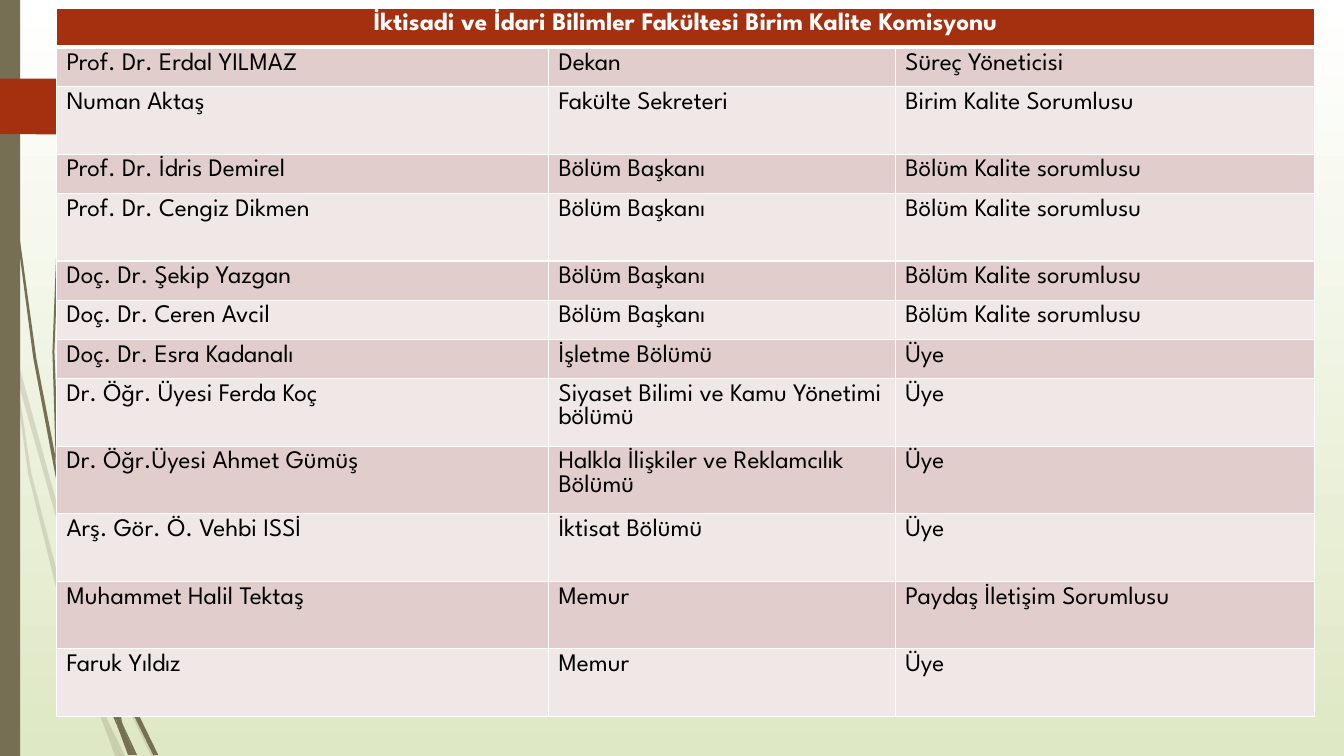
import pptx
import pptx.dml.color
import pptx.enum.text
import pptx.oxml.ns
import pptx.util
import lxml.etree

RGBColor = pptx.dml.color.RGBColor
Align = pptx.enum.text.PP_ALIGN

OLIVE = RGBColor(0x76, 0x6F, 0x54)
RUST = RGBColor(0xA5, 0x30, 0x10)
ROSE = RGBColor(0xE1, 0xCD, 0xCC)
BLUSH = RGBColor(0xF0, 0xE8, 0xE7)
PALE_GREEN = RGBColor(0xDF, 0xE8, 0xC4)
WHITE = RGBColor(0xFF, 0xFF, 0xFF)
BLACK = RGBColor(0, 0, 0)

PX = 9144
FONT = "League Spartan"
THIN, THICK = 1, 3
SHORT, TALL = 39, 67

FAINT_GRASS = [
    [(11, 350), (9, 322), (0, 282), (0, 299), (10, 344)],
    [(58, 522), (84, 599), (85, 586), (62, 520), (14, 345), (17, 376)],
    [(92, 607), (88, 596), (88, 610), (123, 694), (150, 750), (155, 750), (127, 692)],
    [(119, 750), (124, 750), (105, 711)],
    [(93, 683), (70, 619), (31, 469), (17, 376), (11, 350), (28, 470), (65, 621),
     (92, 693), (101, 714), (99, 707)],
    [(84, 599), (87, 646), (93, 683), (96, 692), (105, 711), (103, 706), (91, 646),
     (88, 610), (88, 608)],
    [(88, 584), (110, 462), (160, 349), (229, 245), (268, 198), (290, 175), (312, 154),
     (312, 153), (289, 175), (268, 197), (228, 244), (158, 348), (107, 461), (85, 584),
     (85, 586), (88, 596)],
    [(101, 714), (114, 750), (119, 750)],
    [(88, 608), (88, 610), (88, 596), (85, 586), (84, 599)],
    [(96, 692), (93, 683), (99, 707), (101, 714), (119, 750), (105, 711)],
]

DARK_GRASS = [
    [(7, 110), (17, 233), (33, 355), (56, 477), (57, 481), (55, 457), (55, 453),
     (36, 355), (19, 232), (8, 109), (5, 48), (4, 0), (3, 0), (4, 48)],
    [(88, 592), (106, 645), (106, 633), (106, 631), (93, 590), (60, 472), (64, 505)],
    [(113, 649), (110, 641), (111, 656), (132, 708), (152, 749), (157, 749), (136, 706)],
    [(110, 691), (98, 657), (72, 556), (64, 505), (57, 477), (68, 557), (93, 659),
     (111, 708), (117, 722), (116, 717)],
    [(60, 472), (58, 453), (54, 349), (58, 245), (63, 193), (70, 141), (62, 193),
     (56, 245), (52, 349), (55, 449)],
    [(133, 749), (136, 749), (122, 719)],
    [(57, 477), (64, 505), (60, 472), (55, 449), (55, 453)],
    [(111, 633), (125, 552), (158, 476), (205, 406), (231, 374), (245, 359), (261, 344),
     (260, 344), (245, 358), (231, 373), (204, 405), (156, 474), (122, 551), (106, 631),
     (110, 641)],
    [(117, 722), (127, 749), (131, 749)],
    [(106, 645), (110, 691), (116, 706), (122, 719), (121, 716), (111, 656), (109, 651)],
    [(106, 645), (109, 651), (111, 656), (110, 641), (106, 631), (106, 633)],
    [(116, 706), (110, 691), (116, 717), (117, 722), (130, 749), (133, 749), (122, 719)],
]

PAGE_TAB = [(0, 78), (146, 78), (148, 79), (173, 104), (174, 106), (173, 108),
            (148, 133), (146, 134), (136, 134), (0, 133)]

HEADING = "İktisadi ve İdari Bilimler Fakültesi Birim Kalite Komisyonu"
CHAIR = ("Bölüm Başkanı", "Bölüm Kalite sorumlusu")
MEMBERS = [
    (SHORT, "Prof. Dr. Erdal YILMAZ", "Dekan", "Süreç Yöneticisi"),
    (TALL, "Numan Aktaş", "Fakülte Sekreteri", "Birim Kalite Sorumlusu"),
    (SHORT, "Prof. Dr. İdris Demirel", *CHAIR),
    (TALL, "Prof. Dr. Cengiz Dikmen", *CHAIR),
    (SHORT, "Doç. Dr. Şekip Yazgan", *CHAIR),
    (SHORT, "Doç. Dr. Ceren Avcil", *CHAIR),
    (SHORT, "Doç. Dr. Esra Kadanalı", "İşletme Bölümü", "Üye"),
    (TALL, "Dr. Öğr. Üyesi Ferda Koç", "Siyaset Bilimi ve Kamu Yönetimi bölümü", "Üye"),
    (TALL, "Dr. Öğr.Üyesi Ahmet Gümüş", "Halkla İlişkiler ve Reklamcılık Bölümü", "Üye"),
    (TALL, "Arş. Gör. Ö. Vehbi ISSİ", "İktisat Bölümü", "Üye"),
    (TALL, "Muhammet Halil Tektaş", "Memur", "Paydaş İletişim Sorumlusu"),
    (TALL, "Faruk Yıldız", "Memur", "Üye"),
]


def px(length):
    return pptx.util.Emu(length * PX)


def write_text(frame, text, *, size=18, color=BLACK, bold=False, align=Align.LEFT):
    para = frame.paragraphs[0]
    para.alignment = align
    span = para.add_run()
    span.text = text
    span.font.name = FONT
    span.font.size = pptx.util.Pt(size)
    span.font.bold = bold
    span.font.color.rgb = color


def add_xml(parent, tag, **attributes):
    return lxml.etree.SubElement(parent, pptx.oxml.ns.qn(tag), attributes)


class SlidePainter:
    def __init__(self, page):
        self.page = page

    def backdrop(self, top_color, bottom_color):
        fill = self.page.background.fill
        fill.gradient()
        fill.gradient_angle = 270
        for stop, color in zip(fill.gradient_stops, (top_color, bottom_color)):
            stop.color.rgb = color

    def paint(self, shape, color, opacity=100):
        shape.shadow.inherit = False
        shape.fill.solid()
        shape.fill.fore_color.rgb = color
        shape.line.fill.background()
        if opacity < 100:
            tint = shape.fill._xPr.find(".//" + pptx.oxml.ns.qn("a:srgbClr"))
            add_xml(tint, "a:alpha", val=str(opacity * 1000))

    def outline(self, points, color, opacity=100, shapes=None):
        shapes = self.page.shapes if shapes is None else shapes
        builder = shapes.build_freeform(*points[0], scale=PX)
        builder.add_line_segments(points[1:], close=True)
        self.paint(builder.convert_to_shape(), color, opacity)

    def grass(self, blades, opacity):
        group = self.page.shapes.add_group_shape()
        for blade in blades:
            self.outline(blade, OLIVE, opacity, group.shapes)

    def bar(self, left, top, width, height, color):
        kind = pptx.enum.shapes.MSO_SHAPE.RECTANGLE
        box = self.page.shapes.add_shape(kind, px(left), px(top), px(width), px(height))
        self.paint(box, color)

    def cell(self, cell, fill, top=THIN, bottom=THIN):
        properties = cell._tc.get_or_add_tcPr()
        borders = {"a:lnL": THIN, "a:lnR": THIN, "a:lnT": top, "a:lnB": bottom}
        for tag, points in borders.items():
            line = add_xml(properties, tag, w=str(pptx.util.Pt(points)))
            add_xml(add_xml(line, "a:solidFill"), "a:srgbClr", val=str(WHITE))
        cell.fill.solid()
        cell.fill.fore_color.rgb = fill

    def table(self, left, top, height, widths, heading, records):
        frame = self.page.shapes.add_table(
            len(records) + 1, len(widths), px(left), px(top), px(sum(widths)), px(height))
        grid = frame.table
        for column, width in zip(grid.columns, widths):
            column.width = px(width)
        for row, row_height in zip(grid.rows, [SHORT] + [record[0] for record in records]):
            row.height = px(row_height)
        frame.height = px(height)

        for cell in grid.rows[0].cells:
            self.cell(cell, RUST, bottom=THICK)
        title = grid.cell(0, 0)
        title.merge(grid.cell(0, len(widths) - 1))
        write_text(title.text_frame, heading, color=WHITE, bold=True, align=Align.CENTER)

        for number, (_, *texts) in enumerate(records, 1):
            fill = ROSE if number % 2 else BLUSH
            for column, text in enumerate(texts):
                cell = grid.cell(number, column)
                self.cell(cell, fill, top=THICK if number == 1 else THIN)
                write_text(cell.text_frame, text)


def main():
    deck = pptx.Presentation()
    deck.slide_width, deck.slide_height = px(1333), px(750)
    painter = SlidePainter(deck.slides.add_slide(deck.slide_layouts[6]))
    painter.backdrop(WHITE, PALE_GREEN)
    painter.grass(FAINT_GRASS, opacity=20)
    painter.grass(DARK_GRASS, opacity=100)
    painter.bar(0, 0, 20, 750, OLIVE)
    painter.outline(PAGE_TAB, RUST)
    painter.table(56, 8, 725, (488, 344, 416), HEADING, MEMBERS)
    deck.save("out.pptx")


if __name__ == "__main__":
    main()
